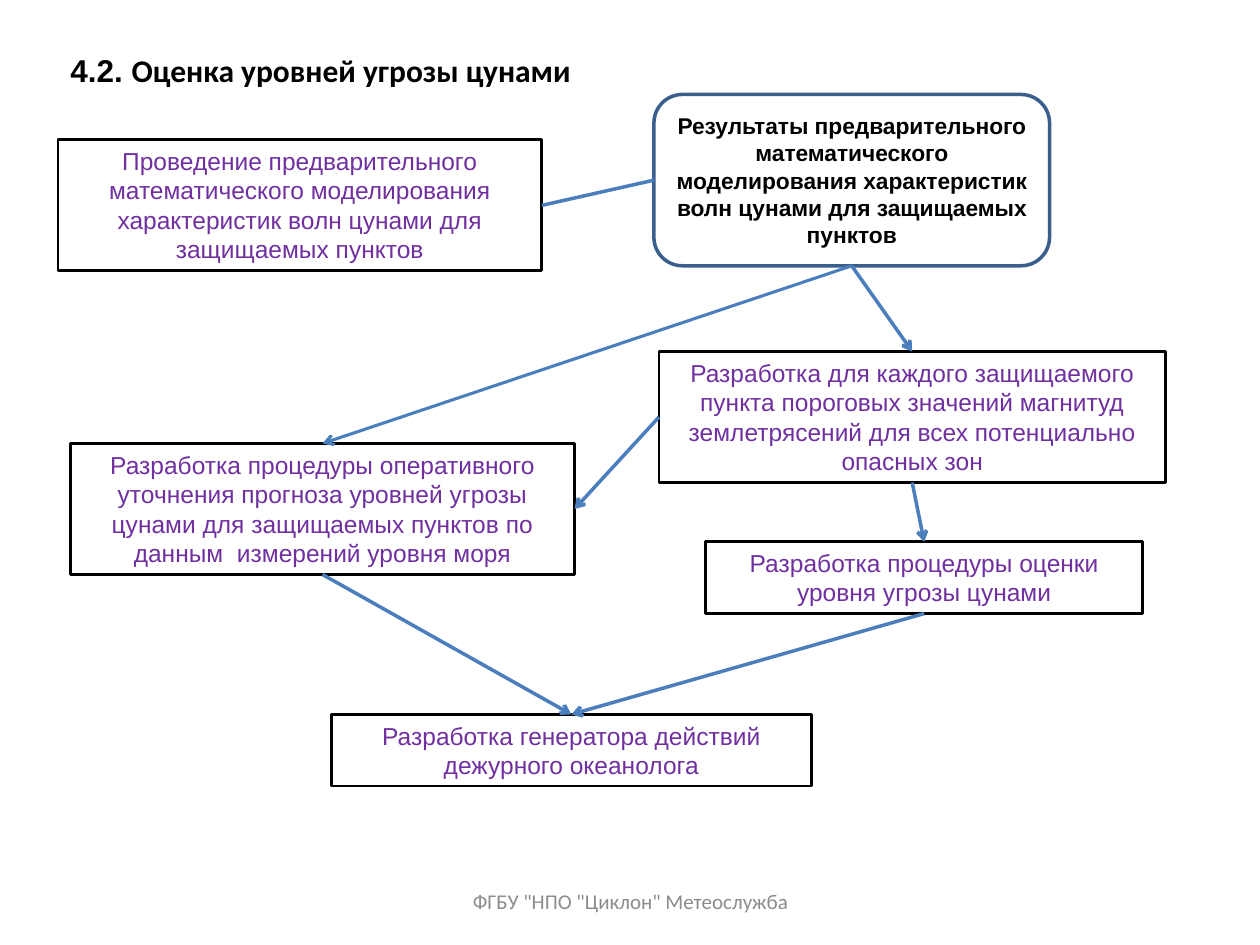
"""Build a flowchart slide about assessing tsunami threat levels."""
from dataclasses import dataclass

from lxml.etree import SubElement
from pptx import Presentation
from pptx.dml.color import RGBColor
from pptx.enum.shapes import MSO_CONNECTOR as Connector, MSO_SHAPE as Shape
from pptx.enum.text import MSO_ANCHOR as Anchor, PP_ALIGN as Align
from pptx.oxml.ns import qn
from pptx.util import Inches, Pt


@dataclass(frozen=True)
class Theme:
    """Colours, fonts and sizes of the slide."""
    black: RGBColor = RGBColor(0x00, 0x00, 0x00)
    purple: RGBColor = RGBColor(0x70, 0x30, 0xA0)
    blue: RGBColor = RGBColor(0x4B, 0x7E, 0xBC)
    dark_blue: RGBColor = RGBColor(0x3A, 0x5F, 0x8C)
    grey: RGBColor = RGBColor(0x8C, 0x8C, 0x8C)
    body_font: str = "Arial"
    heading_font: str = "Calibri"
    title_size: Pt = Pt(18)
    step_size: Pt = Pt(14)
    result_size: Pt = Pt(13)
    footer_size: Pt = Pt(12)
    step_line: Pt = Pt(1.5)
    result_line: Pt = Pt(2)
    arrow_line: Pt = Pt(2)
    thin_arrow_line: Pt = Pt(1.75)


THEME = Theme()
TOP, LEFT, BOTTOM, RIGHT = range(4)

STEPS = {
    "thresholds": ((5.23, 2.79, 4.02, 1.04),
                   ["Разработка для каждого защищаемого пункта пороговых значений "
                    "магнитуд землетрясений для всех потенциально опасных зон"]),
    "refinement": ((0.56, 3.52, 4, 1.04),
                   ["Разработка процедуры оперативного уточнения прогноза уровней "
                    "угрозы цунами для защищаемых пунктов по данным  измерений "
                    "уровня моря"]),
    "modelling": ((0.46, 1.11, 3.84, 1.04),
                  ["Проведение предварительного математического моделирования "
                   "характеристик волн цунами для защищаемых пунктов"]),
    "assessment": ((5.6, 4.3, 3.47, 0.57),
                   ["Разработка процедуры оценки уровня угрозы цунами"]),
    "generator": ((2.63, 5.67, 3.81, 0.57),
                  ["Разработка генератора действий", "дежурного океанолога"]),
}
RESULT_BOX = (5.19, 0.75, 3.14, 1.36)
RESULT_TEXT = ("Результаты предварительного математического моделирования "
               "характеристик волн цунами для защищаемых пунктов")

ARROWS = [
    ("results", BOTTOM, "thresholds", TOP),
    ("thresholds", LEFT, "refinement", RIGHT),
    ("thresholds", BOTTOM, "assessment", TOP),
    ("assessment", BOTTOM, "generator", TOP),
    ("refinement", BOTTOM, "generator", TOP),
]


def style_font(font, name, size, color, bold=False):
    """Set the look of a run or paragraph font."""
    font.name, font.size, font.bold = name, size, bold
    font.color.rgb = color


def add_text_box(slide, box, anchor=Anchor.TOP, wrap=True):
    """Add an empty text box and return its first paragraph."""
    frame = slide.shapes.add_textbox(*map(Inches, box)).text_frame
    frame.word_wrap = wrap
    frame.vertical_anchor = anchor
    return frame.paragraphs[0]


def add_title(slide):
    """Add the numbered title in its two fonts."""
    paragraph = add_text_box(slide, (0.46, 0.36, 4.21, 0.4), wrap=False)
    for text, name in (("4.2. ", THEME.body_font),
                       ("Оценка уровней угрозы цунами", THEME.heading_font)):
        run = paragraph.add_run()
        run.text = text
        style_font(run.font, name, THEME.title_size, THEME.black, True)


def add_footer(slide):
    """Add the centred footer."""
    paragraph = add_text_box(slide, (3.42, 6.95, 3.17, 0.4), Anchor.MIDDLE)
    paragraph.text = 'ФГБУ "НПО "Циклон" Метеослужба'
    paragraph.alignment = Align.CENTER
    style_font(paragraph.font, THEME.heading_font, THEME.footer_size, THEME.grey)


def add_box(slide, kind, box, lines, line_color, line_width, anchor, size, color,
            bold=False):
    """Add an outlined box with centred text."""
    shape = slide.shapes.add_shape(kind, *map(Inches, box))
    shape.shadow.inherit = False
    shape.fill.background()
    shape.line.color.rgb = line_color
    shape.line.width = line_width
    frame = shape.text_frame
    frame.word_wrap = True
    frame.vertical_anchor = anchor
    frame.text = "\n".join(lines)
    for paragraph in frame.paragraphs:
        paragraph.alignment = Align.CENTER
        style_font(paragraph.font, THEME.body_font, size, color, bold)
    return shape


def add_step(slide, box, lines):
    """Add a rectangular step of the process."""
    return add_box(slide, Shape.RECTANGLE, box, lines, THEME.black,
                   THEME.step_line, Anchor.TOP, THEME.step_size, THEME.purple)


def add_result(slide, box, text):
    """Add the rounded box with the modelling results."""
    return add_box(slide, Shape.ROUNDED_RECTANGLE, box, [text], THEME.dark_blue,
                   THEME.result_line, Anchor.MIDDLE, THEME.result_size,
                   THEME.black, True)


def connect(slide, start, start_side, end, end_side, width=THEME.arrow_line,
            arrow=True):
    """Join two boxes with a straight line or arrow."""
    line = slide.shapes.add_connector(Connector.STRAIGHT, 0, 0, 0, 0)
    line.begin_connect(start, start_side)
    line.end_connect(end, end_side)
    line.line.color.rgb = THEME.blue
    line.line.width = width
    if arrow:
        SubElement(line.line._get_or_add_ln(), qn("a:tailEnd"), type="arrow")
    SubElement(line._element.spPr, qn("a:effectLst"))


def main():
    """Build and save the slide."""
    presentation = Presentation()
    presentation.slide_width = Inches(10)
    presentation.slide_height = Inches(7.5)
    slide = presentation.slides.add_slide(presentation.slide_layouts[6])

    add_footer(slide)
    add_title(slide)
    boxes = {name: add_step(slide, *step) for name, step in STEPS.items()}
    boxes["results"] = add_result(slide, RESULT_BOX, RESULT_TEXT)

    for start, start_side, end, end_side in ARROWS:
        connect(slide, boxes[start], start_side, boxes[end], end_side)
    connect(slide, boxes["modelling"], RIGHT, boxes["results"], LEFT, arrow=False)
    connect(slide, boxes["results"], BOTTOM, boxes["refinement"], TOP,
            THEME.thin_arrow_line)

    presentation.save("out.pptx")


if __name__ == "__main__":
    main()
